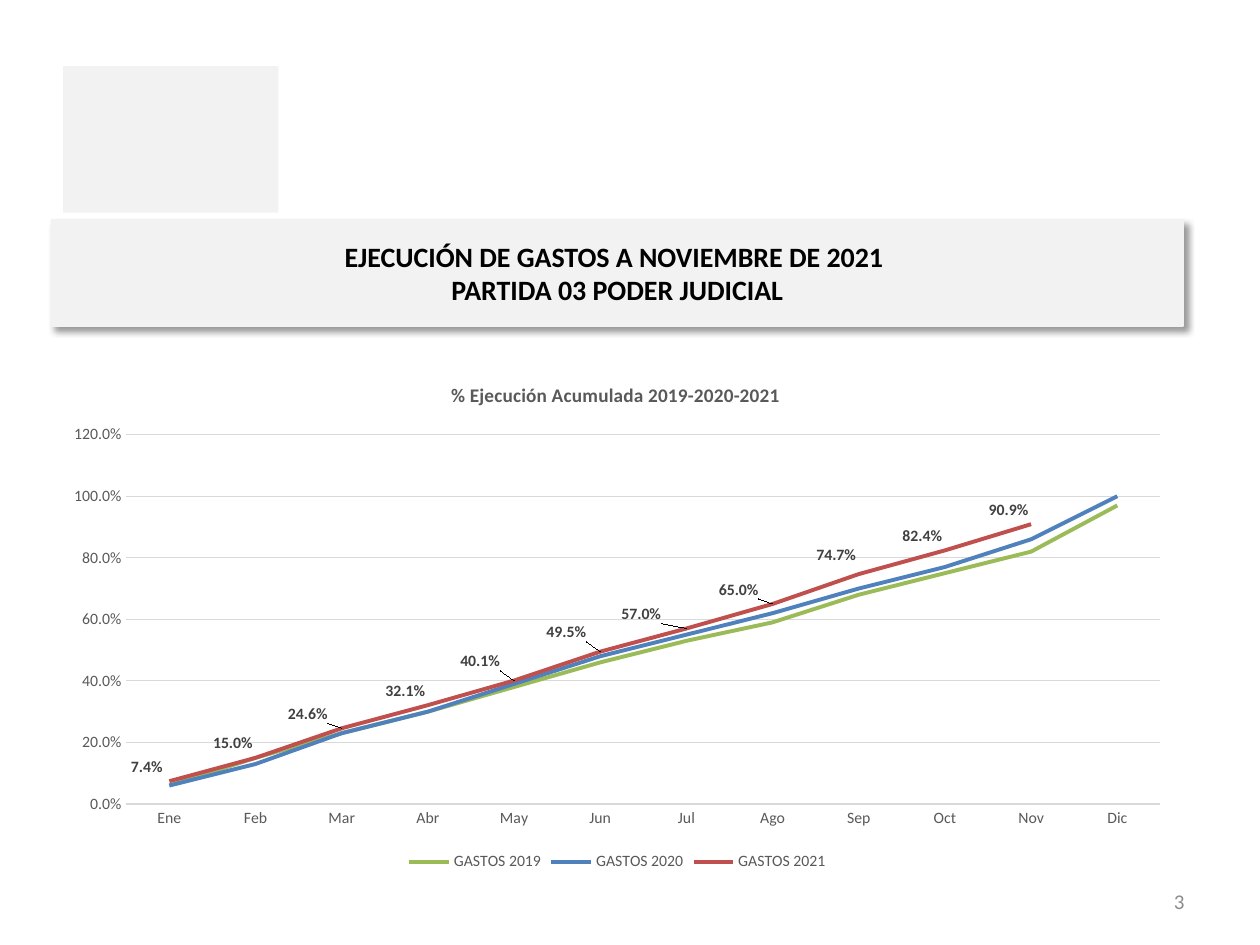
import pptx
import pptx.chart.data
import pptx.dml.color
import pptx.enum.chart
import pptx.enum.shapes
import pptx.enum.text
import pptx.oxml
import pptx.oxml.ns
import pptx.util

Inches, Pt = pptx.util.Inches, pptx.util.Pt
RGBColor = pptx.dml.color.RGBColor
ALIGN = pptx.enum.text.PP_ALIGN
MIDDLE = pptx.enum.text.MSO_ANCHOR.MIDDLE

WIDTH, HEIGHT = Inches(10), Inches(7.5)
BLACK = RGBColor(0, 0, 0)
PALE_GREY = RGBColor(0xF2, 0xF2, 0xF2)
GRID_GREY = RGBColor(0xD9, 0xD9, 0xD9)
NUMBER_GREY = RGBColor(0x8C, 0x8C, 0x8C)
TEXT_GREY = RGBColor(0x59, 0x59, 0x59)
LABEL_GREY = RGBColor(0x40, 0x40, 0x40)
GREEN = RGBColor(0x9B, 0xBB, 0x59)
BLUE = RGBColor(0x4F, 0x81, 0xBD)
RED = RGBColor(0xC0, 0x50, 0x4D)

MONTHS = ["Ene", "Feb", "Mar", "Abr", "May", "Jun", "Jul", "Ago", "Sep", "Oct", "Nov", "Dic"]
SPENDING = [
    ("GASTOS 2019", GREEN, [0.06, 0.15, 0.23, 0.3, 0.38, 0.46, 0.53, 0.59, 0.68, 0.75, 0.82, 0.97]),
    ("GASTOS 2020", BLUE, [0.06, 0.13, 0.23, 0.3, 0.39, 0.48, 0.55, 0.62, 0.7, 0.77, 0.86, 1]),
    ("GASTOS 2021", RED, [0.074, 0.15, 0.246, 0.321, 0.401, 0.495, 0.57, 0.65, 0.747, 0.824, 0.909, None]),
]
# Shift of each 2021 label from its place above the point, in shares of the chart
LABEL_SHIFTS = [(-0.02, 0), (-0.02, 0), (-0.03, 0), (-0.02, 0), (-0.03, -0.01), (-0.03, -0.01),
                (-0.04, 0), (-0.03, 0), (-0.02, -0.01), (-0.02, 0), (-0.02, 0)]
NO_LEADER_LINES = (
    f'<c:extLst {pptx.oxml.ns.nsdecls("c")}><c:ext uri="{{CE6537A1-D6FC-4f65-9D91-7224C49458BB}}" '
    'xmlns:c15="http://schemas.microsoft.com/office/drawing/2012/chart">'
    '<c15:showLeaderLines val="0"/></c:ext></c:extLst>')


def box_of(left, top, width, height):
    """Turn shares of the slide's size into a box in slide units."""
    return (int(WIDTH * left), int(HEIGHT * top), int(WIDTH * width), int(HEIGHT * height))


def set_font(font, size, color, bold=False):
    font.name, font.size, font.bold = "Calibri", Pt(size), bold
    font.color.rgb = color


def add_drop_shadow(shape):
    shape.shadow.inherit = False
    effects = shape.element.spPr.find(pptx.oxml.ns.qn("a:effectLst"))
    effects.append(pptx.oxml.parse_xml(
        f'<a:outerShdw {pptx.oxml.ns.nsdecls("a")} blurRad="{Pt(4)}" dist="{Pt(3)}" dir="2700000" '
        'algn="tl" rotWithShape="0"><a:srgbClr val="000000"><a:alpha val="40000"/></a:srgbClr></a:outerShdw>'))


def set_layout(element, index, modes, **shares):
    """Place a chart part by hand, its layout being the child at index."""
    for old_layout in element.xpath("./c:layout"):
        element.remove(old_layout)
    places = "".join(f'<c:{key} val="{share}"/>' for key, share in shares.items())
    element.insert(index, pptx.oxml.parse_xml(
        f'<c:layout {pptx.oxml.ns.nsdecls("c")}><c:manualLayout>{modes}{places}</c:manualLayout></c:layout>'))


def add_header_block(slide, box):
    block = slide.shapes.add_shape(pptx.enum.shapes.MSO_SHAPE.RECTANGLE, *box)
    block.shadow.inherit = False
    block.fill.solid()
    block.fill.fore_color.rgb = PALE_GREY
    block.line.fill.background()


def place_title(slide, box):
    title = slide.shapes.title
    title.left, title.top, title.width, title.height = box
    title.fill.solid()
    title.fill.fore_color.rgb = PALE_GREY
    title.line.color.rgb = PALE_GREY
    title.line.width = Pt(0.75)
    add_drop_shadow(title)
    frame = title.text_frame
    frame.word_wrap = True
    frame.vertical_anchor = MIDDLE
    frame.text = "EJECUCIÓN DE GASTOS A NOVIEMBRE DE 2021 \vPARTIDA 03 PODER JUDICIAL"
    paragraph = frame.paragraphs[0]
    paragraph.alignment = ALIGN.CENTER
    set_font(paragraph.font, 16, BLACK, bold=True)


def format_axes(chart):
    for axis in (chart.category_axis, chart.value_axis):
        axis.major_tick_mark = axis.minor_tick_mark = pptx.enum.chart.XL_TICK_MARK.NONE
        set_font(axis.tick_labels.font, 9, TEXT_GREY)
    value_axis = chart.value_axis
    value_axis.minimum_scale, value_axis.maximum_scale, value_axis.major_unit = 0, 1.2, 0.2
    value_axis.tick_labels.number_format = "0.0%"
    value_axis.tick_labels.number_format_is_linked = False
    value_axis.format.line.fill.background()
    for line in (value_axis.major_gridlines.format.line, chart.category_axis.format.line):
        line.color.rgb = GRID_GREY
        line.width = Pt(0.75)


def label_points(chart, series):
    labels = series.data_labels
    labels.show_value = True
    labels.number_format, labels.number_format_is_linked = "0.0%", False
    labels.position = pptx.enum.chart.XL_LABEL_POSITION.ABOVE
    set_font(labels.font, 9, LABEL_GREY, bold=True)
    for index in range(len(LABEL_SHIFTS)):
        label = series.points[index].data_label
        set_font(label.font, 9, LABEL_GREY, bold=True)
        label.position = pptx.enum.chart.XL_LABEL_POSITION.ABOVE
    for element, (x, y) in zip(chart.element.xpath(".//c:dLbl"), LABEL_SHIFTS):
        set_layout(element, 1, "", x=x, y=y)
    chart.element.xpath(".//c:ser/c:dLbls")[0].append(pptx.oxml.parse_xml(NO_LEADER_LINES))


def add_spending_chart(slide, box):
    data = pptx.chart.data.CategoryChartData(number_format="0.0%")
    data.categories = MONTHS
    for name, _, values in SPENDING:
        data.add_series(name, values)
    chart = slide.shapes.add_chart(pptx.enum.chart.XL_CHART_TYPE.LINE, *box, data).chart
    set_font(chart.font, 10, BLACK)
    chart.has_title = True
    chart.chart_title.text_frame.text = "% Ejecución Acumulada 2019-2020-2021"
    set_font(chart.chart_title.text_frame.paragraphs[0].font, 11, TEXT_GREY, bold=True)
    chart.chart_title.include_in_layout = False
    chart.has_legend = True
    chart.legend.position = pptx.enum.chart.XL_LEGEND_POSITION.BOTTOM
    chart.legend.include_in_layout = False
    set_font(chart.legend.font, 9, TEXT_GREY)
    format_axes(chart)
    plot = chart.plots[0]
    plot.vary_by_categories = False
    for series, (_, color, _) in zip(plot.series, SPENDING):
        series.smooth = False
        series.marker.style = pptx.enum.chart.XL_MARKER_STYLE.NONE
        series.format.line.color.rgb = color
        series.format.line.width = Pt(2.25)
    label_points(chart, plot.series[-1])
    edges = '<c:xMode val="edge"/><c:yMode val="edge"/>'
    set_layout(chart.element.xpath("./c:chart/c:title")[0], 1, edges, x=0.35, y=0.03)
    set_layout(chart.element.xpath("./c:chart/c:plotArea")[0], 0, '<c:layoutTarget val="inner"/>' + edges,
               x=0.066, y=0.14, w=0.914, h=0.72)


def add_slide_number(slide, box):
    frame = slide.shapes.add_textbox(*box).text_frame
    frame.word_wrap = True
    frame.vertical_anchor = MIDDLE
    frame.text = "3"
    paragraph = frame.paragraphs[0]
    paragraph.alignment = ALIGN.RIGHT
    set_font(paragraph.font, 12, NUMBER_GREY)


def main():
    presentation = pptx.Presentation()
    presentation.slide_width, presentation.slide_height = WIDTH, HEIGHT
    slide = presentation.slides.add_slide(presentation.slide_layouts[5])
    add_header_block(slide, box_of(0.05, 0.07, 0.171, 0.155))
    add_slide_number(slide, box_of(0.717, 0.927, 0.233, 0.053))
    place_title(slide, box_of(0.041, 0.232, 0.898, 0.113))
    add_spending_chart(slide, box_of(0.041, 0.384, 0.898, 0.543))
    presentation.save("out.pptx")


if __name__ == "__main__":
    main()
